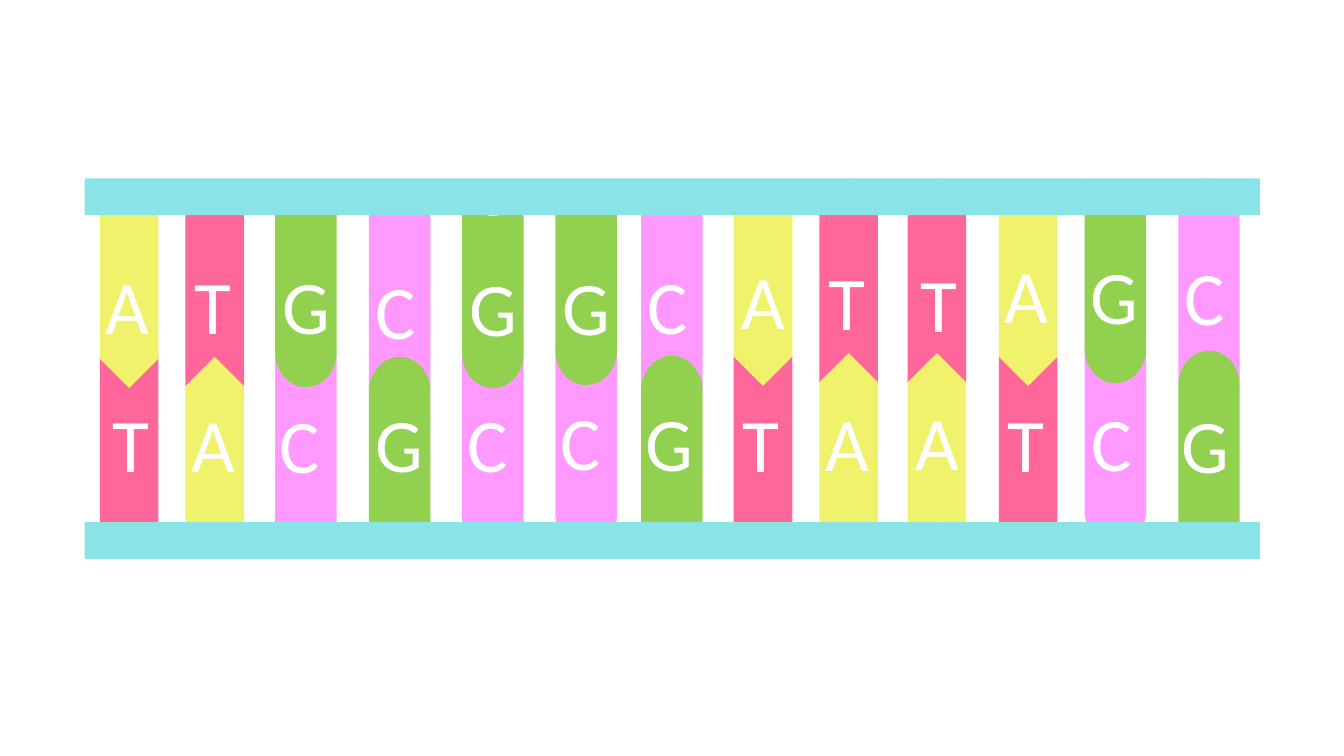
from collections import namedtuple

from pptx import Presentation
from pptx.dml.color import RGBColor
from pptx.enum.shapes import MSO_SHAPE
from pptx.enum.text import MSO_AUTO_SIZE, PP_ALIGN
from pptx.util import Pt

CHEVRON = MSO_SHAPE.CHEVRON
ROUNDED = MSO_SHAPE.FLOWCHART_STORED_DATA
RECT = MSO_SHAPE.RECTANGLE
FIT = MSO_AUTO_SIZE.SHAPE_TO_FIT_TEXT
CENTER = PP_ALIGN.CENTER

YELLOW = RGBColor(0xEF, 0xF2, 0x6A)
ROSE = RGBColor(0xFF, 0x66, 0x99)
GREEN = RGBColor(0x92, 0xD0, 0x50)
PINK = RGBColor(0xFF, 0x99, 0xFF)
AQUA = RGBColor(0x89, 0xE3, 0xE7)
WHITE = RGBColor(0xFF, 0xFF, 0xFF)

Base = namedtuple("Base", "preset length width color turn label_width")
BASES = {
    "A": Base(CHEVRON, 145.4, 41.8, YELLOW, 90, 46.1),
    "T": Base(CHEVRON, 145.4, 41.8, ROSE, 270, 41),
    "G": Base(ROUNDED, 147.6, 43.9, GREEN, 270, 49),
    "C": Base(ROUNDED, 147.6, 43.9, PINK, 90, 43.9),
}
PAIRS = {"A": "T", "T": "A", "G": "C", "C": "G"}
SEQUENCE = "ATGCGGCATTAGC"
COLUMNS = [92.2, 153.4, 218.5, 285.5, 352.1, 418.7, 479.9,
           545, 606.2, 669.2, 734.4, 796.7, 863.6]
TOP_MIDDLES = [204.5, 203, 202.7, 205.6, 203.4, 201.2, 204.8,
               203, 200.2, 200.2, 203, 199.8, 201.2]
BOTTOM_MIDDLES = [326.2, 326.2, 325.1, 325.1, 325.1, 319.3, 324.4,
                  326.9, 322.6, 320.4, 325.4, 315.7, 323.6]
TOP_LABELS = [(90.7, 181.4), (152.3, 181.4), (218.9, 181.4), (282.6, 185),
              (352.1, 182.9), (419, 182.2), (477, 181.4), (545, 177.8),
              (605.2, 178.6), (670.7, 180), (733, 173.5), (795.6, 174.2),
              (860.8, 175)]
BOTTOM_LABELS = [(93.2, 280.1), (152.6, 280.1), (214.2, 280.8), (285.1, 280.1),
                 (348.1, 280.1), (415.1, 278.6), (478.1, 279.4), (543.2, 280.1),
                 (605.5, 279.4), (669.6, 278.6), (732.6, 280.1), (793.8, 279.4),
                 (861.1, 280.8)]
LABEL_HEIGHT = 72.7
LABEL_FONT = {"name": "Calibri", "size": Pt(54)}


def add_block(shapes, preset, x, y, w, h, color, turn=0):
    sp = shapes.add_shape(preset, Pt(x), Pt(y), Pt(w), Pt(h))
    sp.rotation = turn
    sp.shadow.inherit = False
    sp.fill.solid()
    sp.fill.fore_color.rgb = color
    sp.line.fill.background()


def add_backbone(shapes, y):
    add_block(shapes, RECT, 60.5, y, 839.5, 26.2, AQUA)


def add_base(shapes, letter, x, y, turn):
    base = BASES[letter]
    add_block(shapes, base.preset, x - base.length / 2, y - base.width / 2,
              base.length, base.width, base.color, turn)


def add_label(shapes, letter, x, y):
    w = BASES[letter].label_width
    tf = shapes.add_textbox(Pt(x - w / 2), Pt(y), Pt(w), Pt(LABEL_HEIGHT)).text_frame
    tf.word_wrap = False
    tf.auto_size = FIT
    p = tf.paragraphs[0]
    p.alignment = CENTER
    r = p.add_run()
    r.text = letter
    for key, value in LABEL_FONT.items():
        setattr(r.font, key, value)
    r.font.color.rgb = WHITE


def add_labels(shapes, letters, places):
    for letter, (x, y) in zip(letters, places):
        add_label(shapes, letter, x, y)


def main():
    prs = Presentation()
    prs.slide_width, prs.slide_height = Pt(960), Pt(540)
    shapes = prs.slides.add_slide(prs.slide_layouts[6]).shapes
    complement = [PAIRS[letter] for letter in SEQUENCE]

    for letter, x, y in zip(complement, COLUMNS, BOTTOM_MIDDLES):
        add_base(shapes, letter, x, y, 360 - BASES[letter].turn)
    add_labels(shapes, complement, BOTTOM_LABELS)

    strand = shapes.add_group_shape().shapes
    for letter, x, y in zip(SEQUENCE, COLUMNS, TOP_MIDDLES):
        add_base(strand, letter, x, y, BASES[letter].turn)
    add_backbone(strand, 127.5)
    add_labels(strand, SEQUENCE, TOP_LABELS)

    add_backbone(shapes, 373)
    prs.save("out.pptx")


if __name__ == "__main__":
    main()
